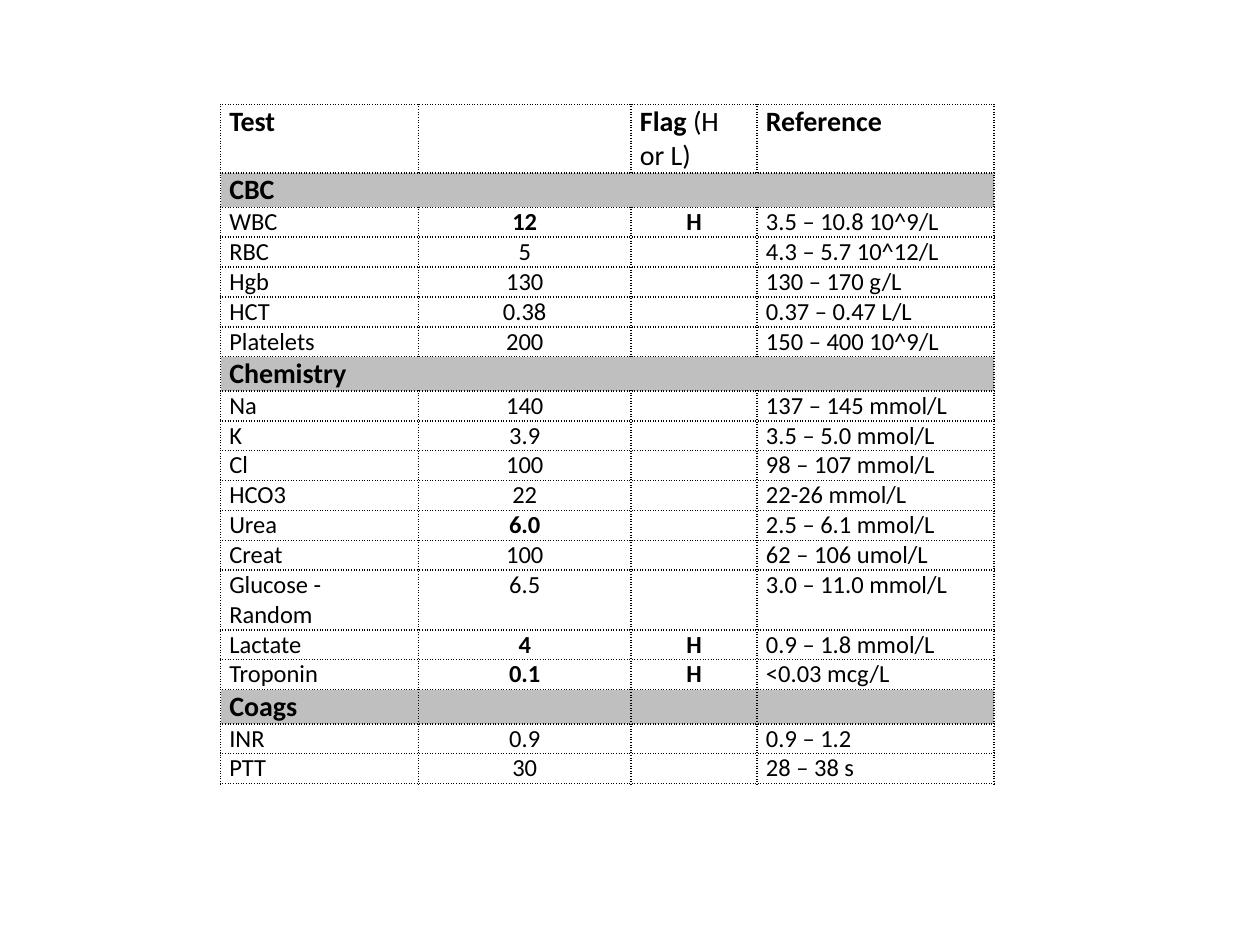
from lxml import etree
from pptx import Presentation
from pptx import util as u
from pptx.dml.color import RGBColor
from pptx.enum import text
from pptx.oxml import ns

COLORS = {"ink": "000000", "header": "FFFFFF", "section": "BFBFBF"}
COLUMNS = [1.57, 1.69, 1, 1.88]
HEADER = [[("Test", True)], [], [("Flag ", True), ("(H or L)", False)],
          [("Reference", True)]]

# Each test: name, result, flag, reference, whether the result is bold
PANELS = {
    "CBC": [
        ("WBC", "12", "H", "3.5 – 10.8 10^9/L", True),
        ("RBC", "5", "", "4.3 – 5.7 10^12/L", False),
        ("Hgb", "130", "", "130 – 170 g/L", False),
        ("HCT", "0.38", "", "0.37 – 0.47 L/L", False),
        ("Platelets", "200", "", "150 – 400 10^9/L", False),
    ],
    "Chemistry": [
        ("Na", "140", "", "137 – 145 mmol/L", False),
        ("K", "3.9", "", "3.5 – 5.0 mmol/L", False),
        ("Cl", "100", "", "98 – 107 mmol/L", False),
        ("HCO3", "22", "", "22-26 mmol/L", False),
        ("Urea", "6.0", "", "2.5 – 6.1 mmol/L", True),
        ("Creat", "100", "", "62 – 106 umol/L", False),
        ("Glucose - Random", "6.5", "", "3.0 – 11.0 mmol/L", False),
        ("Lactate", "4", "H", "0.9 – 1.8 mmol/L", True),
        ("Troponin", "0.1", "H", "<0.03 mcg/L", True),
    ],
    "Coags": [
        ("INR", "0.9", "", "0.9 – 1.2", False),
        ("PTT", "30", "", "28 – 38 s", False),
    ],
}
MERGED_PANELS = {"CBC", "Chemistry"}


class LabSlide:
    font, head_size, body_size = "Calibri", 16, 14

    def __init__(self, prs):
        self.s = prs.slides.add_slide(prs.slide_layouts[6])

    def table(self, left, top, widths, heights):
        frame = self.s.shapes.add_table(
            len(heights), len(widths), u.Inches(left), u.Inches(top),
            u.Inches(sum(widths)), u.Inches(sum(heights)))
        table = frame.table
        table.first_row = table.horz_banding = False
        for column, width in zip(table.columns, widths):
            column.width = u.Inches(width)
        for row, height in zip(table.rows, heights):
            row.height = u.Inches(height)
        return table

    def borders(self, cell):
        tcPr = cell._tc.get_or_add_tcPr()
        for side in ("a:lnL", "a:lnR", "a:lnT", "a:lnB"):
            ln = etree.SubElement(tcPr, ns.qn(side), w=str(u.Pt(1)))
            fill = etree.SubElement(ln, ns.qn("a:solidFill"))
            etree.SubElement(fill, ns.qn("a:srgbClr"), val=COLORS["ink"])
            etree.SubElement(ln, ns.qn("a:prstDash"), val="sysDot")

    def cell(self, cell, runs, size, fill=None, centered=False):
        """Style a cell and write its (text, bold) runs."""
        cell.margin_left = cell.margin_right = u.Inches(0.07)
        cell.margin_top = cell.margin_bottom = 0
        self.borders(cell)
        if fill:
            cell.fill.solid()
            cell.fill.fore_color.rgb = RGBColor.from_string(COLORS[fill])
        else:
            cell.fill.background()
        p = cell.text_frame.paragraphs[0]
        if centered:
            p.alignment = text.PP_ALIGN.CENTER
        for words, bold in runs:
            r = p.add_run()
            r.text = words
            r.font.name, r.font.size, r.font.bold = self.font, u.Pt(size), bold
            r.font.color.rgb = RGBColor.from_string(COLORS["ink"])
        if not runs:  # keeps an empty cell from stretching its row
            etree.SubElement(p._p, ns.qn("a:endParaRPr"), sz=str(size * 100))

    def heading_row(self, table, row, contents, fill):
        for column, runs in enumerate(contents):
            self.cell(table.cell(row, column), runs, self.head_size, fill)

    def test_row(self, table, row, test):
        *values, abnormal = test
        for column, value in enumerate(values):
            runs = [(value, abnormal and column in (1, 2))] if value else []
            self.cell(table.cell(row, column), runs, self.body_size,
                      centered=column in (1, 2))


def main():
    prs = Presentation()
    prs.slide_width, prs.slide_height = u.Inches(10), u.Inches(7.5)
    slide = LabSlide(prs)

    heights = [0.54]
    for tests in PANELS.values():
        heights.append(0.27)
        heights += [0.47 if test[0].startswith("Glucose") else 0.23
                    for test in tests]
    table = slide.table(1.75, 0.83, COLUMNS, heights)

    slide.heading_row(table, 0, HEADER, "header")
    row = 1
    for panel, tests in PANELS.items():
        slide.heading_row(table, row, [[(panel, True)], [], [], []], "section")
        if panel in MERGED_PANELS:
            table.cell(row, 0).merge(table.cell(row, len(COLUMNS) - 1))
        for row, test in enumerate(tests, row + 1):
            slide.test_row(table, row, test)
        row += 1
    prs.save("out.pptx")


if __name__ == "__main__":
    main()
